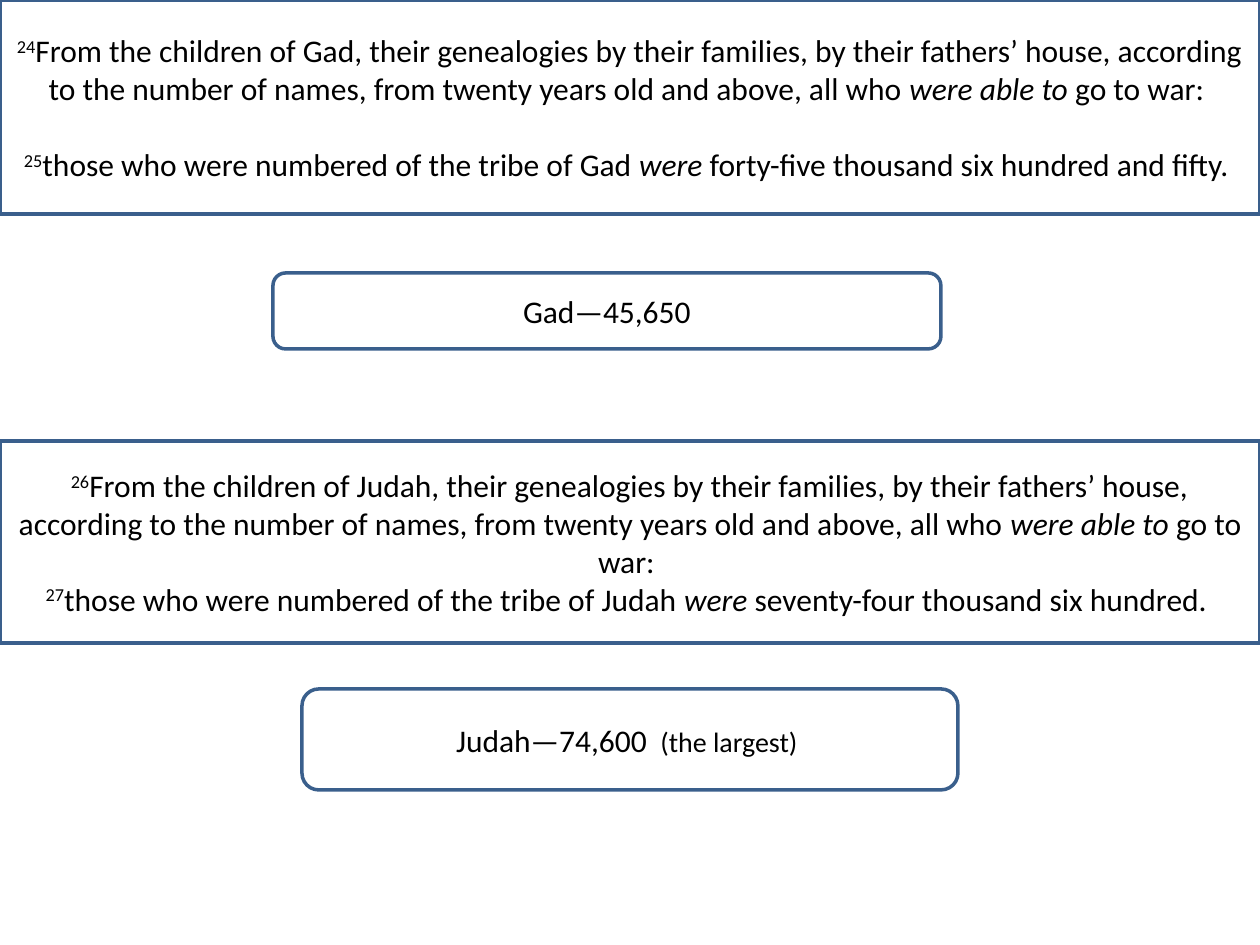
from pptx import Presentation
from pptx import util as u
from pptx.dml.color import RGBColor
from pptx.enum import shapes, text

PX_PER_INCH = 126
COLORS = {"paper": "FFFFFF", "border": "3A5F8C", "ink": "000000"}
FONT = {"name": "Calibri", "size": u.Pt(18), "italic": False}
BLANK_LINE = 22  # points

NUMBER = {"baseline": "30000"}
ITALIC = {"italic": True}
SMALL = {"size": u.Pt(16)}


def px(length):
    return u.Emu(round(length * 914400 / PX_PER_INCH))


def color(name):
    return RGBColor.from_string(COLORS[name])


def add_run(paragraph, words, style):
    run = paragraph.add_run()
    run.text = words
    for key, value in {**FONT, **style}.items():
        if key == "baseline":
            run._r.get_or_add_rPr().set("baseline", value)
        else:
            setattr(run.font, key, value)
    run.font.color.rgb = color("ink")


def add_box(slide, outline, place, paragraphs, gap=0):
    """Add an outlined box; each paragraph is a list of (words, style) runs."""
    box = slide.shapes.add_shape(outline, *map(px, place))
    box.shadow.inherit = False
    box.fill.solid()
    box.fill.fore_color.rgb = color("paper")
    box.line.color.rgb = color("border")
    box.line.width = u.Pt(2)
    frame = box.text_frame
    frame.word_wrap = True
    frame.vertical_anchor = text.MSO_ANCHOR.MIDDLE
    for index, runs in enumerate(paragraphs):
        paragraph = frame.add_paragraph() if index else frame.paragraphs[0]
        paragraph.alignment = text.PP_ALIGN.CENTER
        if index and gap:
            paragraph.space_before = u.Pt(gap)
        for words, style in runs:
            add_run(paragraph, words, style)


def add_verses(slide, place, tribe, first_verse, count, gap=0):
    """Add the two verses that number one tribe."""
    families = [
        (str(first_verse), NUMBER),
        (f"From the children of {tribe}, their genealogies by their families, "
         "by their fathers’ house, according to the number of names, "
         "from twenty years old and above, all who ", {}),
        ("were able to", ITALIC),
        (" go to war: ", {}),
    ]
    total = [
        (str(first_verse + 1), NUMBER),
        (f"those who were numbered of the tribe of {tribe} ", {}),
        ("were", ITALIC),
        (f" {count}. ", {}),
    ]
    add_box(slide, shapes.MSO_SHAPE.RECTANGLE, place, [families, total], gap)


def add_tally(slide, place, runs):
    add_box(slide, shapes.MSO_SHAPE.ROUNDED_RECTANGLE, place, [runs])


def main():
    deck = Presentation()
    deck.slide_width, deck.slide_height = px(1260), px(945)
    slide = deck.slides.add_slide(deck.slide_layouts[6])

    add_verses(slide, (0, 0, 1260, 214), "Gad", 24,
               "forty-five thousand six hundred and fifty", BLANK_LINE)
    add_verses(slide, (0, 441, 1260, 202), "Judah", 26,
               "seventy-four thousand six hundred")
    add_tally(slide, (273, 273, 668, 76), [("Gad—45,650", {})])
    add_tally(slide, (302, 689, 656, 101),
              [("Judah—74,600 ", {}), (" (the largest) ", SMALL)])

    deck.save("out.pptx")


if __name__ == "__main__":
    main()
